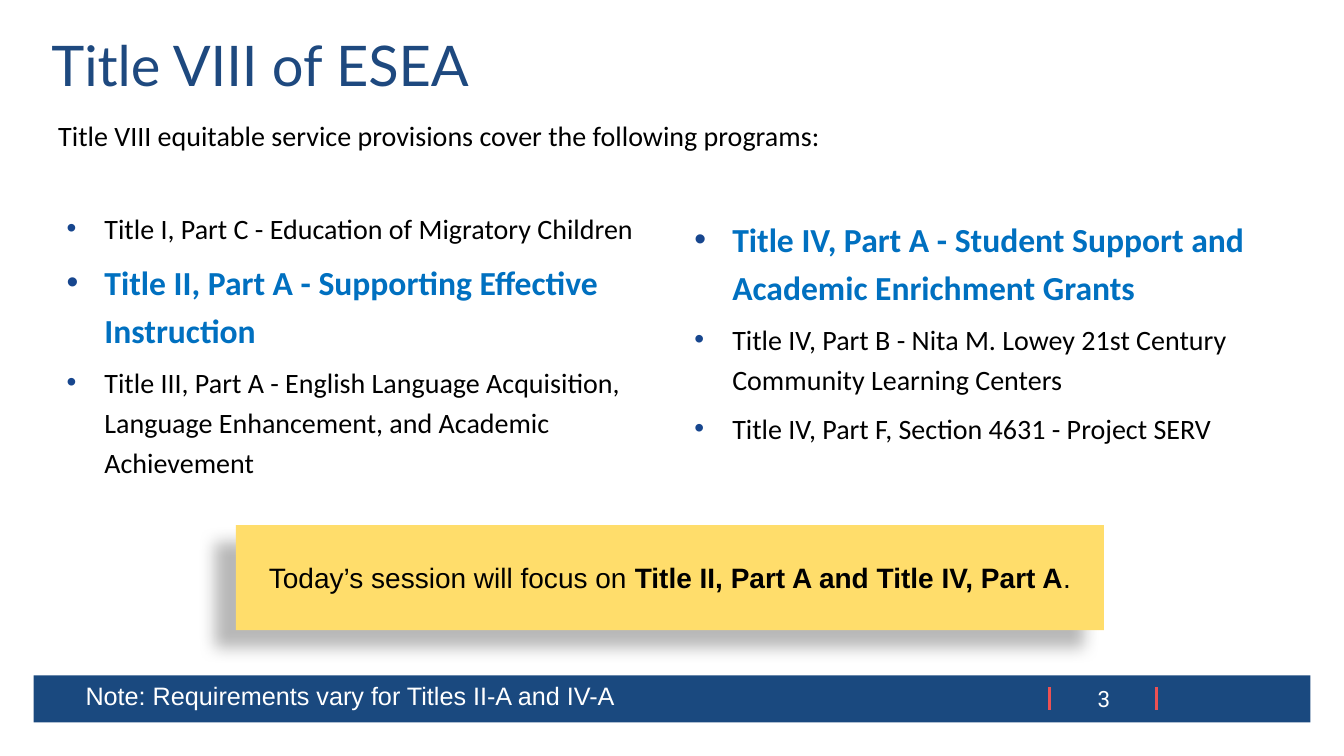
from dataclasses import dataclass

from lxml.etree import SubElement
from pptx import Presentation
from pptx.dml.color import RGBColor
from pptx.enum.shapes import MSO_CONNECTOR, MSO_SHAPE
from pptx.enum.text import MSO_ANCHOR, PP_ALIGN
from pptx.oxml.ns import qn
from pptx.util import Pt


@dataclass(frozen=True)
class Theme:
    navy: str = "1A497F"
    title: str = "1E497F"
    bullet: str = "17468E"
    focus: str = "0070C0"
    yellow: str = "FFDD6B"
    red: str = "EC5153"
    black: str = "000000"
    white: str = "FFFFFF"
    title_size: int = 40
    focus_size: int = 24
    body_size: int = 20
    note_size: int = 18
    number_size: int = 16
    title_font: str = "Lato"
    body_font: str = "Calibri"
    plain_font: str = "Arial"
    number_font: str = "Roboto"


class SlideBuilder:
    def __init__(self, prs, theme):
        self.theme = theme
        self.s = prs.slides.add_slide(prs.slide_layouts[5])

    def style(self, r, font, size, color, bold=False):
        r.font.name = font
        r.font.size = Pt(size)
        r.font.bold = bold
        r.font.color.rgb = RGBColor.from_string(color)

    def title(self, text, left, top, width, height):
        sp = self.s.shapes.title
        sp.left, sp.top, sp.width, sp.height = map(Pt, (left, top, width, height))
        tf = sp.text_frame
        tf.text = text
        tf.vertical_anchor = MSO_ANCHOR.TOP
        p = tf.paragraphs[0]
        p.alignment = PP_ALIGN.LEFT
        p.line_spacing = 0.9
        self.style(p.runs[0], self.theme.title_font, self.theme.title_size, self.theme.title)

    def text(self, text, box, font, size, color, align=PP_ALIGN.LEFT,
             anchor=MSO_ANCHOR.TOP, spacing=1.0):
        tf = self.s.shapes.add_textbox(*map(Pt, box)).text_frame
        tf.word_wrap = True
        tf.vertical_anchor = anchor
        tf.text = text
        p = tf.paragraphs[0]
        p.alignment = align
        p.line_spacing = spacing
        self.style(p.runs[0], font, size, color)

    def bullets(self, items, box, focus):
        t = self.theme
        tf = self.s.shapes.add_textbox(*map(Pt, box)).text_frame
        tf.word_wrap = True
        tf.text = "\n".join(items)
        for i, p in enumerate(tf.paragraphs):
            p.line_spacing = 1.2
            p.space_before = Pt(6 if i else 0)
            pPr = p._p.get_or_add_pPr()
            pPr.set("marL", str(Pt(30)))
            pPr.set("indent", str(Pt(-27)))
            SubElement(SubElement(pPr, qn("a:buClr")), qn("a:srgbClr"), val=t.bullet)
            SubElement(pPr, qn("a:buFont"), typeface=t.plain_font)
            SubElement(pPr, qn("a:buChar"), char="•")
            if i == focus:
                self.style(p.runs[0], t.body_font, t.focus_size, t.focus, True)
            else:
                self.style(p.runs[0], t.body_font, t.body_size, t.black)

    def rect(self, box, fill):
        sp = self.s.shapes.add_shape(MSO_SHAPE.RECTANGLE, *map(Pt, box))
        sp.shadow.inherit = False
        sp.fill.solid()
        sp.fill.fore_color.rgb = RGBColor.from_string(fill)
        sp.line.fill.background()
        return sp

    def callout(self, parts, box):
        t = self.theme
        sp = self.rect(box, t.yellow)
        shadow = SubElement(sp._element.spPr.find(qn("a:effectLst")), qn("a:outerShdw"),
                            blurRad=str(Pt(11.8)), dist=str(Pt(19.7)),
                            dir=str(141 * 60000), algn="tr", rotWithShape="0")
        color = SubElement(shadow, qn("a:srgbClr"), val=t.black)
        SubElement(color, qn("a:alpha"), val="28000")
        tf = sp.text_frame
        tf.word_wrap = True
        tf.vertical_anchor = MSO_ANCHOR.MIDDLE
        p = tf.paragraphs[0]
        p.alignment = PP_ALIGN.CENTER
        for text, bold in parts:
            r = p.add_run()
            r.text = text
            self.style(r, t.plain_font, t.body_size, t.black, bold)

    def divider(self, x, top, bottom):
        line = self.s.shapes.add_connector(MSO_CONNECTOR.STRAIGHT, *map(Pt, (x, top, x, bottom)))
        line.line.color.rgb = RGBColor.from_string(self.theme.red)
        line.line.width = Pt(2.25)
        SubElement(line._element.spPr, qn("a:effectLst"))


def main():
    prs = Presentation()
    prs.slide_width, prs.slide_height = Pt(960), Pt(540)
    t = Theme()
    b = SlideBuilder(prs, t)

    b.rect((24, 482.4, 912, 33.6), t.navy)
    for x in (749.5, 825.8):
        b.divider(x, 491, 507)
    b.title("Title VIII of ESEA", 29.5, 23.8, 912, 55.4)
    b.text("3", (765.4, 486, 46, 26.6), t.number_font, t.number_size, t.white,
           PP_ALIGN.CENTER, MSO_ANCHOR.MIDDLE)
    b.text("Title VIII equitable service provisions cover the following programs:",
           (34.5, 75.6, 912, 67), t.body_font, t.body_size, t.black, spacing=1.23)
    b.bullets(["Title I, Part C - Education of Migratory Children",
               "Title II, Part A - Supporting Effective Instruction",
               "Title III, Part A - English Language Acquisition, "
               "Language Enhancement, and Academic Achievement"],
              (37.5, 142.6, 436.5, 291.6), focus=1)
    b.bullets(["Title IV, Part A - Student Support and Academic Enrichment Grants",
               "Title IV, Part B - Nita M. Lowey 21st Century Community Learning Centers",
               "Title IV, Part F, Section 4631 - Project SERV"],
              (486, 146.9, 437, 291.6), focus=0)
    b.callout([("Today’s session will focus on ", False),
               ("Title II, Part A and Title IV, Part A", True),
               (".", False)], (168.5, 375.1, 620, 75))
    b.text("Note: Requirements vary for Titles II-A and IV-A",
           (54, 482.4, 400, 30), t.plain_font, t.note_size, t.white)

    prs.save("out.pptx")


if __name__ == "__main__":
    main()
